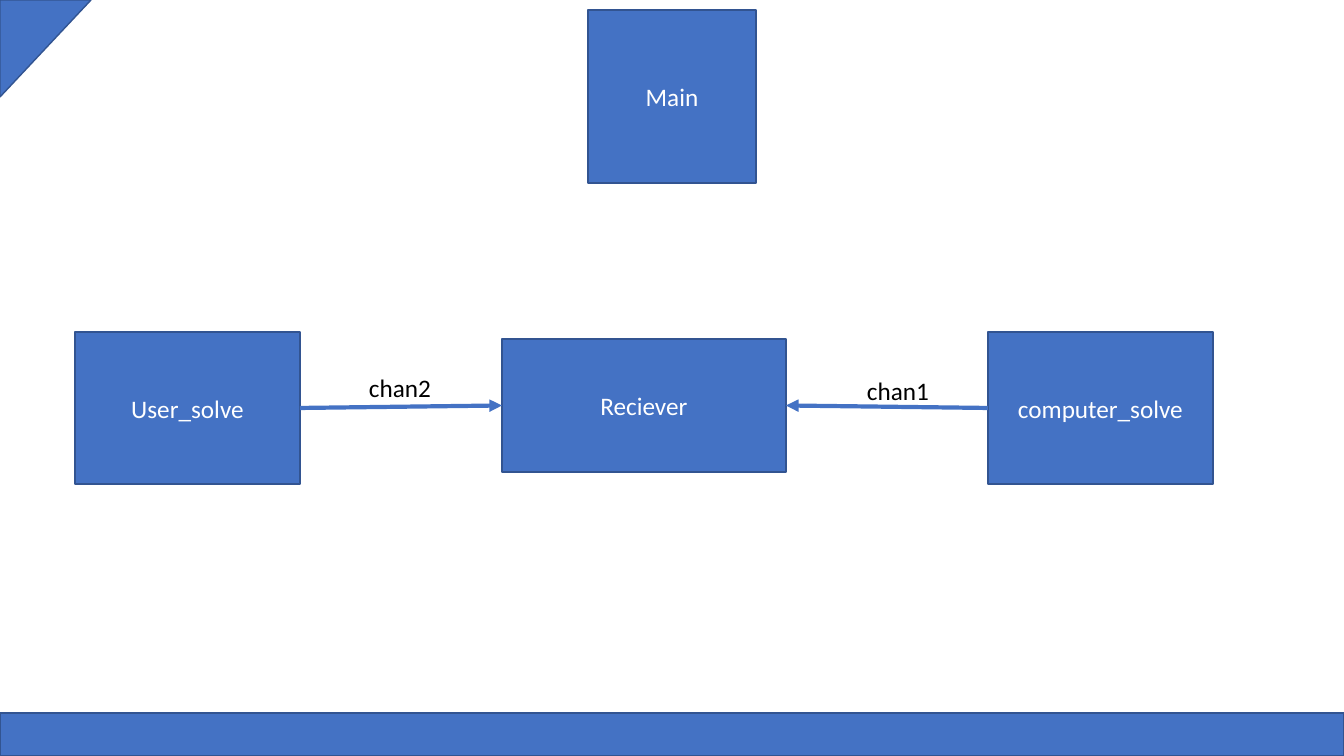
from pptx import Presentation
from pptx.dml.color import RGBColor
from pptx.enum.shapes import MSO_CONNECTOR as Connector, MSO_SHAPE as Shape
from pptx.enum.text import MSO_ANCHOR as Anchor, MSO_AUTO_SIZE as AutoSize, PP_ALIGN as Align
from pptx.oxml.ns import qn
from pptx.util import Pt
from lxml.etree import SubElement

THEME = {
    "fill": RGBColor.from_string("4472C4"),
    "outline": RGBColor.from_string("325491"),
    "on_fill": RGBColor.from_string("FFFFFF"),
    "text": RGBColor.from_string("000000"),
    "font": "Calibri",
    "size": Pt(18),
    "outline_width": Pt(1),
    "arrow_width": Pt(3),
}
SLIDE_WIDTH, SLIDE_HEIGHT = 1344, 756
EMU_PER_PX = 914400 / 100.8
LEFT, RIGHT = 1, 3


def px(*lengths):
    """Turn pixel lengths into a list of EMU values."""
    return [round(length * EMU_PER_PX) for length in lengths]


def write(shape, text, color, align):
    paragraph = shape.text_frame.paragraphs[0]
    paragraph.alignment = align
    run = paragraph.add_run()
    run.text = text
    run.font.color.rgb = color
    for name, value in {"name": THEME["font"], "size": THEME["size"]}.items():
        setattr(run.font, name, value)


presentation = Presentation()
presentation.slide_width, presentation.slide_height = px(SLIDE_WIDTH, SLIDE_HEIGHT)
slide = presentation.slides.add_slide(presentation.slide_layouts[6])

# Decorations and process boxes: kind, (left, top, width, height), rotation, text
blocks = [
    (Shape.RECTANGLE, (0, 713, SLIDE_WIDTH, 43), 0, ""),
    (Shape.RIGHT_TRIANGLE, (-3, 3, 97, 91), 90, ""),
    (Shape.RECTANGLE, (588, 10, 168, 173), 0, "Main"),
    (Shape.RECTANGLE, (75, 332, 225, 152), 0, "User_solve"),
    (Shape.RECTANGLE, (988, 332, 225, 152), 0, "computer_solve"),
    (Shape.RECTANGLE, (502, 339, 284, 133), 0, "Reciever"),
]
boxes = {}
for kind, bounds, rotation, text in blocks:
    shape = slide.shapes.add_shape(kind, *px(*bounds))
    shape.rotation = rotation
    shape.shadow.inherit = False
    shape.fill.solid()
    shape.fill.fore_color.rgb = THEME["fill"]
    shape.line.color.rgb = THEME["outline"]
    shape.line.width = THEME["outline_width"]
    if text:
        shape.text_frame.vertical_anchor = Anchor.MIDDLE
        write(shape, text, THEME["on_fill"], Align.CENTER)
        boxes[text] = shape

# Channels into the receiver
for sender, sender_side, receiver_side in [
    ("User_solve", RIGHT, LEFT),
    ("computer_solve", LEFT, RIGHT),
]:
    arrow = slide.shapes.add_connector(Connector.STRAIGHT, 0, 0, 0, 0)
    arrow.begin_connect(boxes[sender], sender_side)
    arrow.end_connect(boxes["Reciever"], receiver_side)
    arrow.line.color.rgb = THEME["fill"]
    arrow.line.width = THEME["arrow_width"]
    properties = arrow.line._get_or_add_ln()
    SubElement(properties, qn("a:tailEnd"), type="triangle")
    SubElement(properties.getparent(), qn("a:effectLst"))

for text, left, top in [("chan1", 857, 370), ("chan2", 359, 367)]:
    label = slide.shapes.add_textbox(*px(left, top, 83, 40))
    for name, value in {"word_wrap": False, "auto_size": AutoSize.SHAPE_TO_FIT_TEXT}.items():
        setattr(label.text_frame, name, value)
    write(label, text, THEME["text"], Align.LEFT)

presentation.save("out.pptx")
